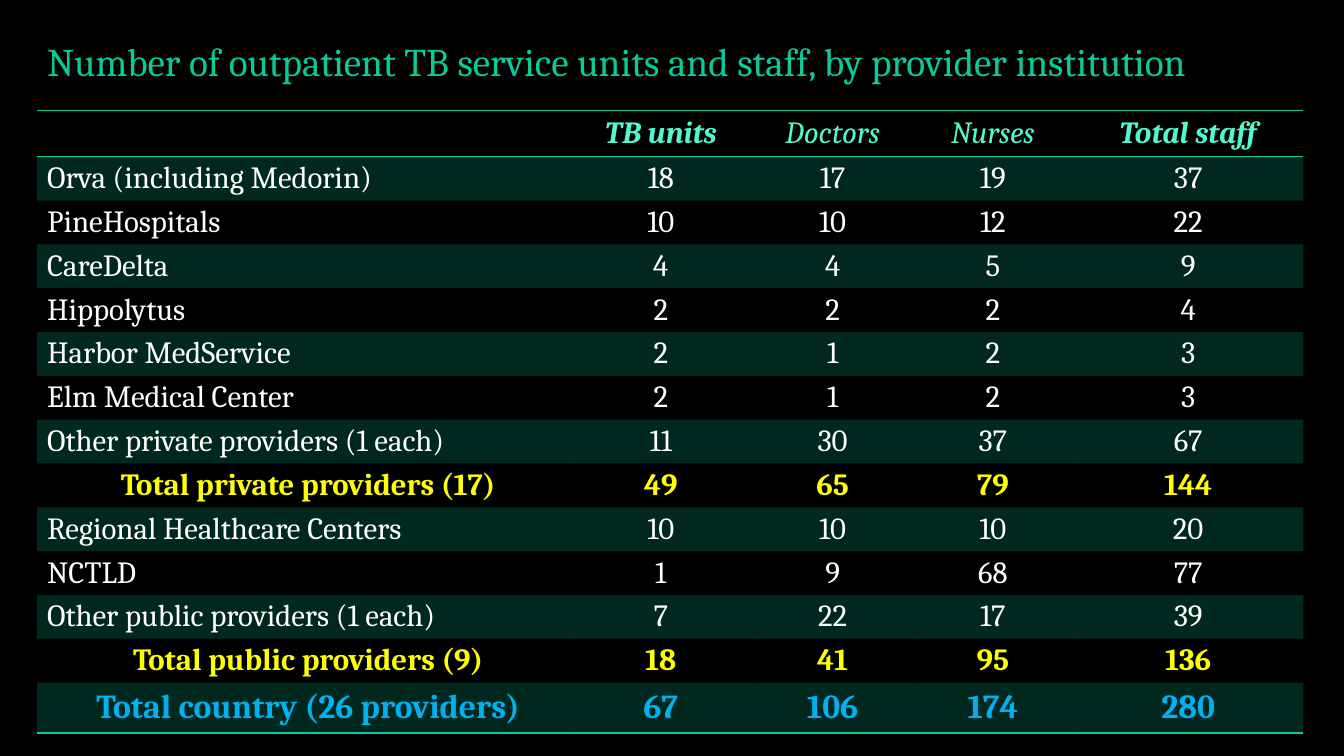
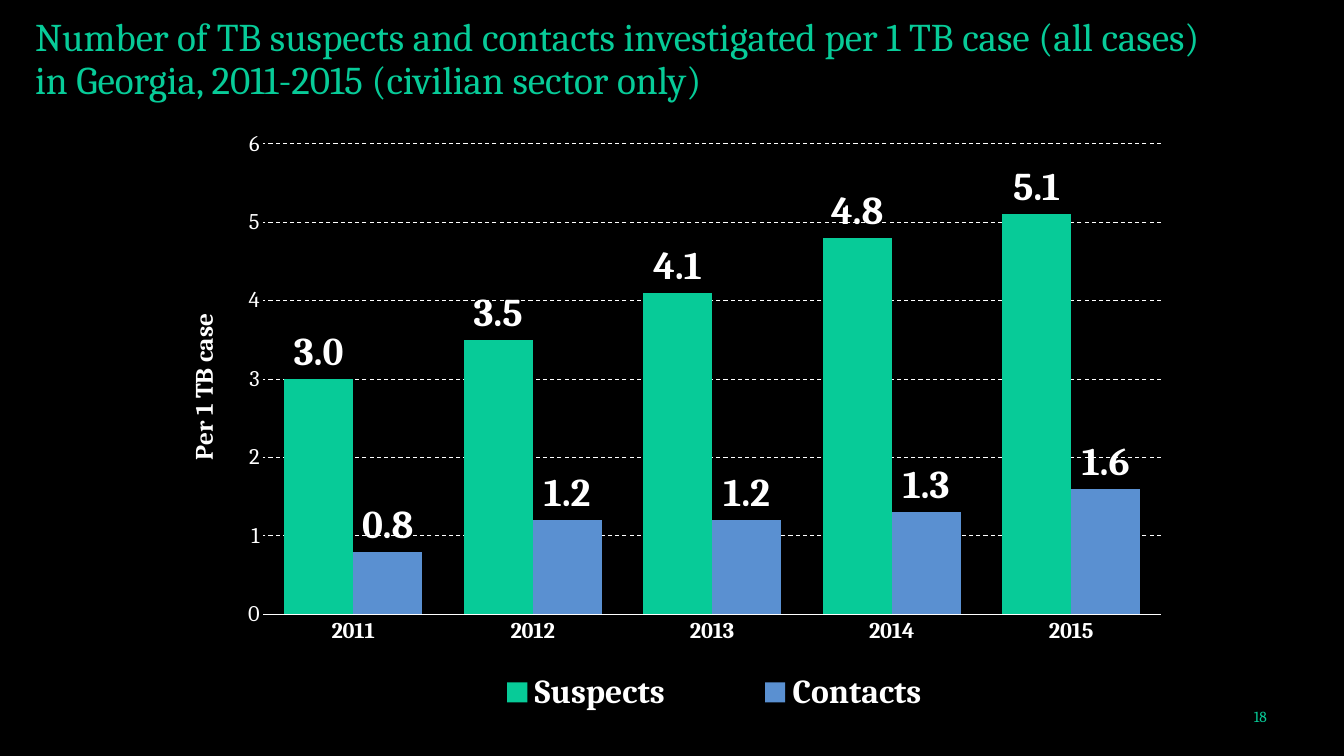
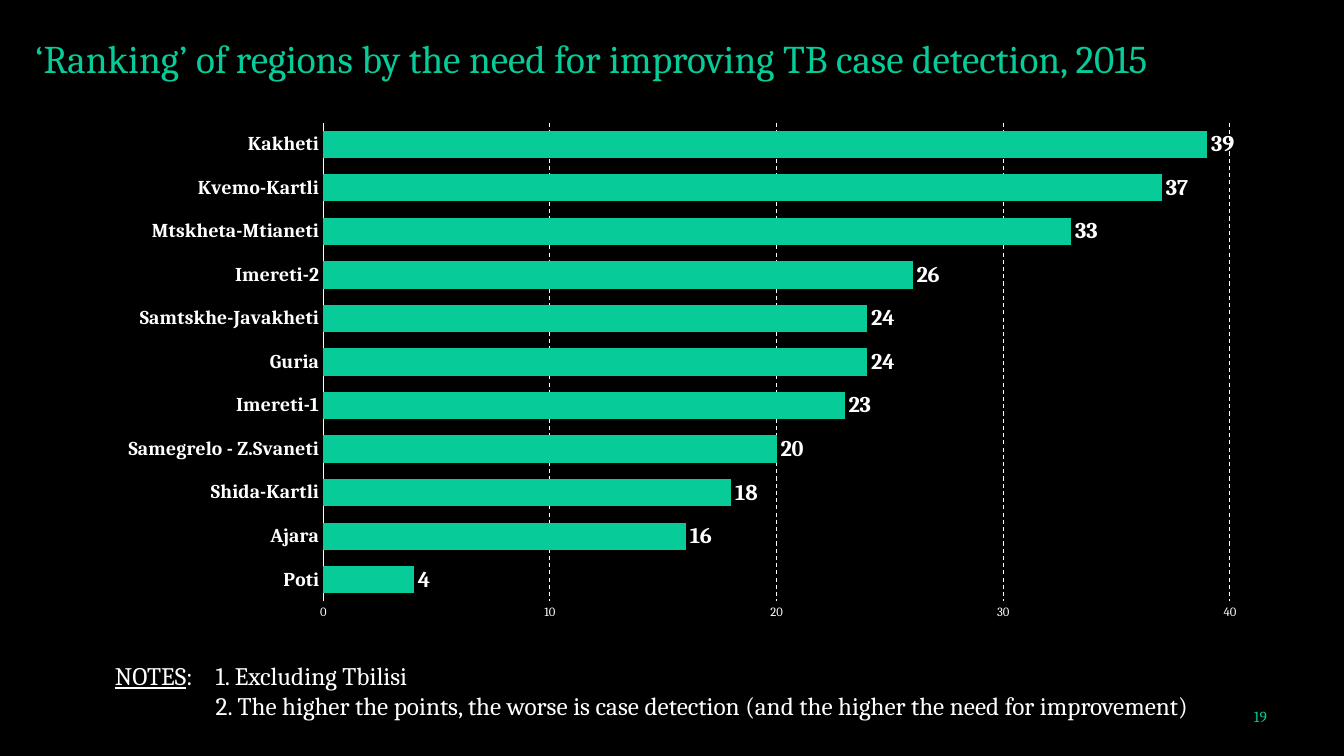
from lxml import etree
from pptx import Presentation
from pptx.chart.data import CategoryChartData
from pptx.dml.color import RGBColor
from pptx.enum.chart import XL_CHART_TYPE as ChartType
from pptx.enum.chart import XL_LABEL_POSITION as LabelPosition
from pptx.enum.chart import XL_LEGEND_POSITION as LegendPosition
from pptx.enum.chart import XL_TICK_MARK as TickMark
from pptx.enum.dml import MSO_LINE as Dash
from pptx.enum.text import MSO_ANCHOR as Anchor
from pptx.enum.text import PP_ALIGN as Align
from pptx.oxml.ns import qn
from pptx.oxml.xmlchemy import OxmlElement
from pptx.util import Pt

FONT = "Cambria"
BLACK = RGBColor(0x00, 0x00, 0x00)
WHITE = RGBColor(0xFF, 0xFF, 0xFF)
GREEN = RGBColor(0x07, 0xCB, 0x98)
MINT = RGBColor(0x51, 0xF9, 0xCD)
YELLOW = RGBColor(0xFF, 0xFF, 0x00)
SKY = RGBColor(0x00, 0xB0, 0xF0)
BLUE = RGBColor(0x5A, 0x90, 0xD1)
NO_TABLE_STYLE = "{2D5ABB26-0587-4C30-8999-92F81FD0307C}"

UNITS_TITLE = ["Number of outpatient TB service units and staff, by provider institution"]
UNITS_HEADER = ["", "TB units", "Doctors", "Nurses", "Total staff"]
KEY_COLUMNS = (1, 4)
UNITS_ROWS = [
    ("Orva (including Medorin)", 18, 17, 19, 37),
    ("PineHospitals", 10, 10, 12, 22),
    ("CareDelta", 4, 4, 5, 9),
    ("Hippolytus", 2, 2, 2, 4),
    ("Harbor MedService", 2, 1, 2, 3),
    ("Elm Medical Center", 2, 1, 2, 3),
    ("Other private providers (1 each)", 11, 30, 37, 67),
    ("Total private providers (17)", 49, 65, 79, 144),
    ("Regional Healthcare Centers", 10, 10, 10, 20),
    ("NCTLD", 1, 9, 68, 77),
    ("Other public providers (1 each)", 7, 22, 17, 39),
    ("Total public providers (9)", 18, 41, 95, 136),
    ("Total country (26 providers)", 67, 106, 174, 280),
]
COLUMN_WIDTHS = [380, 131, 114.5, 114.5, 164.5]
HEADER_HEIGHT, ROW_HEIGHT, LAST_HEIGHT = 33, 31.3, 36

CASES_TITLE = [
    "Number of TB suspects and contacts investigated per 1 TB case (all cases)",
    "in Georgia, 2011-2015 (civilian sector only)",
]
YEARS = ["2011", "2012", "2013", "2014", "2015"]
CASES_SERIES = [
    ("Suspects", [3.0, 3.5, 4.1, 4.8, 5.1], GREEN),
    ("Contacts", [0.8, 1.2, 1.2, 1.3, 1.6], BLUE),
]

RANKING_TITLE = ["‘Ranking’ of regions by the need for improving TB case detection, 2015"]
REGION_POINTS = {
    "Poti": 4, "Ajara": 16, "Shida-Kartli": 18, "Samegrelo - Z.Svaneti": 20,
    "Imereti-1": 23, "Guria": 24, "Samtskhe-Javakheti": 24, "Imereti-2": 26,
    "Mtskheta-Mtianeti": 33, "Kvemo-Kartli": 37, "Kakheti": 39,
}
NOTES = [
    [("NOTES", True), (": \t1. Excluding Tbilisi", False)],
    [("2. The higher the points, the worse is case detection "
      "(and the higher the need for improvement)", False)],
]
NOTES_INDENT = 72


def style_font(font, size, color=WHITE, bold=False, italic=False):
    font.name, font.size = FONT, Pt(size)
    font.bold, font.italic = bold, italic
    font.color.rgb = color


def add_run(paragraph, text, size, color=WHITE, bold=False, italic=False):
    run = paragraph.add_run()
    run.text = text
    style_font(run.font, size, color, bold, italic)
    return run


def add_frame(slide, box, anchor, wrap=True):
    frame = slide.shapes.add_textbox(*map(Pt, box)).text_frame
    frame.word_wrap = wrap
    frame.vertical_anchor = anchor
    return frame


def add_title(slide, lines, box):
    title = add_frame(slide, box, Anchor.BOTTOM).paragraphs[0]
    title.line_spacing = 0.9
    for number, line in enumerate(lines):
        if number:
            title.add_line_break()
        add_run(title, line, 28, GREEN)


def add_page_number(slide, number):
    paragraph = add_frame(slide, (846.5, 502.5, 65.5, 18), Anchor.MIDDLE).paragraphs[0]
    paragraph.alignment = Align.RIGHT
    add_run(paragraph, str(number), 11, GREEN)


def add_cell_border(cell, side):
    border = etree.SubElement(cell._tc.get_or_add_tcPr(), qn(f"a:{side}"), w=str(Pt(1)))
    fill = etree.SubElement(border, qn("a:solidFill"))
    etree.SubElement(fill, qn("a:srgbClr"), val=str(GREEN))


def tint_cell(cell):
    """Fill a banded row's cell with green at 20 % opacity."""
    cell.fill.solid()
    cell.fill.fore_color.rgb = GREEN
    color = cell._tc.tcPr.find(qn("a:solidFill")).find(qn("a:srgbClr"))
    etree.SubElement(color, qn("a:alpha"), val="20000")


def row_style(row, last):
    """Return text size, colour and boldness of a table row."""
    if row == 0:
        return 22, MINT, False
    if row == last:
        return 24, SKY, True
    is_total = UNITS_ROWS[row - 1][0].startswith("Total")
    return 22, YELLOW if is_total else WHITE, is_total


def add_units_table(slide):
    rows = [UNITS_HEADER, *UNITS_ROWS]
    last = len(rows) - 1
    heights = [HEADER_HEIGHT] + [ROW_HEIGHT] * (last - 1) + [LAST_HEIGHT]
    box = (26.5, 79, sum(COLUMN_WIDTHS), sum(heights))
    table = slide.shapes.add_table(len(rows), len(COLUMN_WIDTHS), *map(Pt, box)).table
    table.first_row = table.horz_banding = False
    table._tbl.tblPr.find(qn("a:tableStyleId")).text = NO_TABLE_STYLE
    for column, width in zip(table.columns, COLUMN_WIDTHS):
        column.width = Pt(width)
    for r, (values, height) in enumerate(zip(rows, heights)):
        table.rows[r].height = Pt(height)
        size, color, bold = row_style(r, last)
        for c, value in enumerate(values):
            cell = table.cell(r, c)
            cell.margin_left = Pt(7.2 if c == 0 else 0)
            cell.margin_right = cell.margin_top = cell.margin_bottom = 0
            cell.vertical_anchor = Anchor.MIDDLE
            paragraph = cell.text_frame.paragraphs[0]
            is_name = c == 0 and not bold
            paragraph.alignment = Align.LEFT if is_name else Align.CENTER
            paragraph.font.size = Pt(size)
            if value != "":
                is_key = r == 0 and c in KEY_COLUMNS
                add_run(paragraph, str(value), size, color, bold or is_key, r == 0)
            if r == 0:
                add_cell_border(cell, "lnT")
            if r in (0, last):
                add_cell_border(cell, "lnB")
            if r % 2:
                tint_cell(cell)
            else:
                cell.fill.background()


def manual_layout(x, y, w, h, inner=False):
    layout = OxmlElement("c:layout")
    manual = etree.SubElement(layout, qn("c:manualLayout"))
    settings = [("layoutTarget", "inner")] if inner else []
    settings += [("xMode", "edge"), ("yMode", "edge"), ("x", x), ("y", y), ("w", w), ("h", h)]
    for tag, value in settings:
        etree.SubElement(manual, qn(f"c:{tag}"), val=str(value))
    return layout


def add_bars(slide, kind, box, categories, series, plot_area, sizes, top, step, label_format):
    """Add a bar chart; sizes are those of category, value and data labels."""
    data = CategoryChartData()
    data.categories = categories
    for name, values, _ in series:
        data.add_series(name, values)
    chart = slide.shapes.add_chart(kind, *map(Pt, box), data).chart
    chart.has_title = chart.has_legend = False
    style_font(chart.font, 10)
    category_size, value_size, label_size = sizes

    category_axis, value_axis = chart.category_axis, chart.value_axis
    for axis in (category_axis, value_axis):
        axis.major_tick_mark = axis.minor_tick_mark = TickMark.NONE
    style_font(category_axis.tick_labels.font, category_size, bold=True)
    style_font(value_axis.tick_labels.font, value_size)
    value_axis.minimum_scale, value_axis.maximum_scale = 0, top
    value_axis.major_unit = step
    value_axis.tick_labels.number_format = "0"
    value_axis.tick_labels.number_format_is_linked = False
    value_axis.format.line.fill.background()
    gridlines = value_axis.major_gridlines.format.line
    for line in (category_axis.format.line, gridlines):
        line.color.rgb = WHITE
        line.width = Pt(0.75)
    gridlines.dash_style = Dash.DASH

    plot = chart.plots[0]
    plot.gap_width, plot.overlap = 60, 0
    plot.vary_by_categories = False
    for bars, (_, _, color) in zip(plot.series, series):
        bars.format.fill.solid()
        bars.format.fill.fore_color.rgb = color
        labels = bars.data_labels
        labels.show_value = True
        labels.position = LabelPosition.OUTSIDE_END
        labels.number_format = label_format
        labels.number_format_is_linked = False
        style_font(labels.font, label_size, bold=True)

    area = chart._chartSpace.chart.plotArea
    for layout in area.findall(qn("c:layout")):
        area.remove(layout)
    area.insert(0, manual_layout(*plot_area, inner=True))
    return chart


def add_cases_chart(slide):
    chart = add_bars(slide, ChartType.COLUMN_CLUSTERED, (102, 88.5, 756, 432), YEARS,
                     CASES_SERIES, (0.114, 0.033, 0.848, 0.778), (16, 16, 28), 6, 1, "0.0")
    axis_title = chart.value_axis.axis_title.text_frame.paragraphs[0]
    add_run(axis_title, "Per 1 TB case", 18, bold=True)
    chart.has_legend = True
    legend = chart.legend
    legend.position = LegendPosition.BOTTOM
    legend.include_in_layout = False
    style_font(legend.font, 24, bold=True)
    for layout in legend._element.findall(qn("c:layout")):
        legend._element.remove(layout)
    position = legend._element.find(qn("c:legendPos"))
    position.addnext(manual_layout(0.26, 0.9, 0.56, 0.08))


def add_notes(slide):
    frame = add_frame(slide, (75, 468, 846, 51), Anchor.TOP, wrap=False)
    for number, runs in enumerate(NOTES):
        paragraph = frame.add_paragraph() if number else frame.paragraphs[0]
        properties = paragraph._p.get_or_add_pPr()
        properties.set("marL", str(Pt(NOTES_INDENT)))
        properties.set("indent", str(0 if number else -Pt(NOTES_INDENT)))
        for text, underline in runs:
            add_run(paragraph, text, 18).font.underline = underline


def main():
    prs = Presentation()
    prs.slide_width, prs.slide_height = Pt(960), Pt(540)
    background = prs.slide_master.background.fill
    background.solid()
    background.fore_color.rgb = BLACK
    units, cases, ranking = (prs.slides.add_slide(prs.slide_layouts[6]) for _ in range(3))

    add_title(units, UNITS_TITLE, (26.5, 23, 904.5, 41))
    add_units_table(units)

    add_title(cases, CASES_TITLE, (18, 16, 929, 61))
    add_cases_chart(cases)
    add_page_number(cases, 18)

    add_title(ranking, RANKING_TITLE, (18, 16, 929, 46))
    add_bars(ranking, ChartType.BAR_CLUSTERED, (44.5, 75, 867, 381), list(REGION_POINTS),
             [("Points", list(REGION_POINTS.values()), GREEN)],
             (0.215, 0.033, 0.747, 0.898), (14, 9, 16), 40, 10, "0")
    add_notes(ranking)
    add_page_number(ranking, 19)

    prs.save("out.pptx")


if __name__ == "__main__":
    main()
